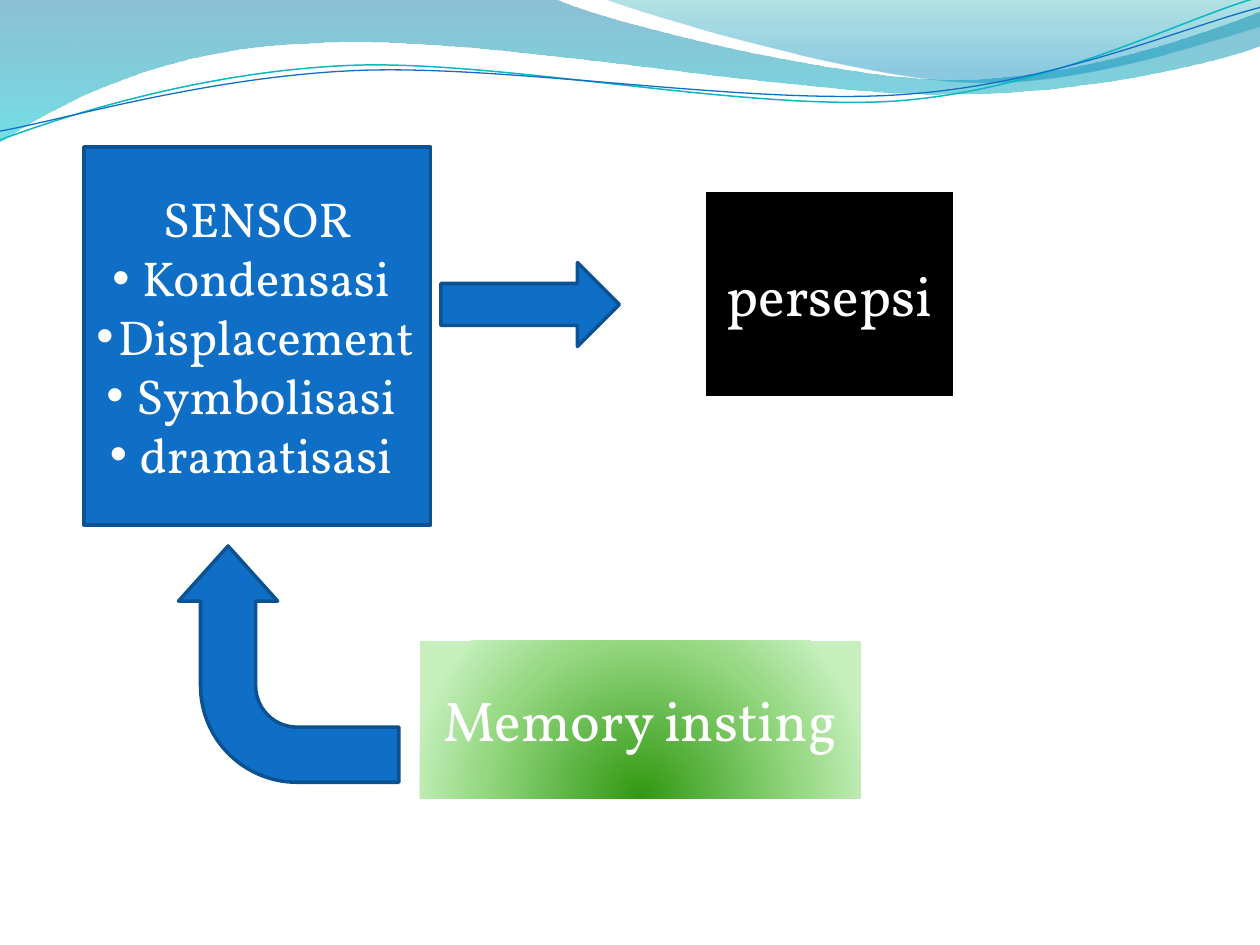
import dataclasses
import math
import typing

import lxml.etree
import pptx
import pptx.dml.color
import pptx.enum.shapes
import pptx.enum.text
import pptx.oxml
import pptx.oxml.ns
import pptx.util

Pt = pptx.util.Pt
SHAPES = pptx.enum.shapes.MSO_SHAPE
qn = pptx.oxml.ns.qn
Point = tuple[float, float]


class Stop(typing.NamedTuple):
    position: int
    color: str
    alpha: int = 100


class Outline(typing.NamedTuple):
    color: str
    width: float


class Gradient(typing.NamedTuple):
    stops: tuple[Stop, ...]
    radial: bool = False


Fill = str | Gradient | None


@dataclasses.dataclass(frozen=True)
class Theme:
    font: str = "Vollkorn"
    text: str = "FFFFFF"
    list_size: int = 28
    label_size: int = 32
    blue: str = "0F6FC6"
    black: str = "000000"
    edge: Outline = Outline("0B5292", 2)
    frame: Outline = Outline("FFFFFF", 3)
    teal_line: Outline = Outline("0AB8BF", 0.85)
    blue_line: Outline = Outline("0F6FC6", 0.75)
    back_wave: Gradient = Gradient((Stop(0, "0074A1", 45), Stop(100, "00C6CF", 55)))
    front_wave: Gradient = Gradient((Stop(0, "00A1A9", 30), Stop(80, "008BBF", 45)))
    green: Gradient = Gradient(
        (Stop(0, "319811"), Stop(68, "95D882"), Stop(100, "C6EFBD")), radial=True)


THEME = Theme()


@dataclasses.dataclass(frozen=True)
class Wave:
    """Segments hold one point for a line, or three for a cubic curve."""
    start: Point
    segments: tuple[tuple[Point, ...], ...]
    fill: Fill = None
    outline: Outline | None = None
    tilt: float = 0
    center: Point = (0, 0)


@dataclasses.dataclass(frozen=True)
class Block:
    kind: SHAPES
    box: tuple[float, float, float, float]
    fill: Fill
    outline: Outline | None = THEME.edge
    rotation: float = 0
    adjustments: tuple[float, ...] = ()
    heading: str = ""
    items: tuple[str, ...] = ()
    size: int = THEME.label_size


WAVES = (
    Wave((0, 0), (
        ((317, -0.7),),
        ((343, 12), (478, 45.4), (546, 45.4)),
        ((614, 45.4), (690, 18.7), (720, 6.5)),
        ((720.7, 26),),
        ((708, 31.7), (626, 54.7), (537, 54)),
        ((448, 54), (275, 20.2), (185, 24.5)),
        ((93, 26), (33, 59.8), (-0.7, 81.4)),
    ), fill=THEME.back_wave),
    Wave((345, -0.7), (
        ((366.5, 8), (491, 44.6), (553.7, 46.8)),
        ((616.3, 49.7), (692, 23), (720, 15.1)),
        ((720, 0),),
    ), fill=THEME.front_wave),
    Wave((0, 80), (
        ((34.6, 67), (113.8, 41), (199.4, 37.4)),
        ((284.4, 33.8), (427, 64), (513.4, 57.6)),
        ((599.8, 51), (675.4, 10.8), (718.6, -1.4)),
    ), outline=THEME.teal_line, tilt=-2.7, center=(359.3, 41.4)),
    Wave((0, 74.9), (
        ((33.8, 69.1), (118, 43.9), (203.8, 40.3)),
        ((290.2, 36.7), (429.8, 60.5), (516.2, 54)),
        ((601.9, 48.2), (677.5, 15.1), (720, 4.3)),
    ), outline=THEME.blue_line, tilt=-2.7, center=(359.6, 42.5)),
)

BLOCKS = (
    Block(SHAPES.FLOWCHART_PROCESS, (240, 366, 252, 90), THEME.green, None,
          heading="Memory insting"),
    Block(SHAPES.BENT_ARROW, (97.5, 316.5, 135, 126), THEME.blue, rotation=270,
          adjustments=(0.25, 0.225, 0.25, 0.438)),
    Block(SHAPES.RECTANGLE, (402, 108, 144, 120), THEME.black, THEME.frame,
          heading="persepsi"),
    Block(SHAPES.RIGHT_ARROW, (252, 150, 102, 48), THEME.blue),
    Block(SHAPES.RECTANGLE, (48, 84, 198, 216), THEME.blue, heading="SENSOR",
          items=("Kondensasi", "Displacement", "Symbolisasi", "dramatisasi"),
          size=THEME.list_size),
)


def rgb(color: str) -> pptx.dml.color.RGBColor:
    return pptx.dml.color.RGBColor.from_string(color)


def gradient_xml(gradient: Gradient) -> str:
    stops = "".join(
        f'<a:gs pos="{stop.position * 1000}"><a:srgbClr val="{stop.color}">'
        f'<a:alpha val="{stop.alpha * 1000}"/></a:srgbClr></a:gs>'
        for stop in gradient.stops)
    direction = (
        '<a:path path="circle"><a:fillToRect l="50000" t="130000" r="50000" b="-30000"/></a:path>'
        if gradient.radial else '<a:lin ang="5400000" scaled="0"/>')
    namespace = pptx.oxml.ns.nsdecls("a")
    return f'<a:gradFill {namespace} rotWithShape="1"><a:gsLst>{stops}</a:gsLst>{direction}</a:gradFill>'


def paint(shape, fill: Fill, outline: Outline | None) -> None:
    shape.shadow.inherit = False
    if isinstance(fill, Gradient):
        shape.fill.gradient()
        properties = shape._element.spPr
        properties.replace(properties.find(qn("a:gradFill")),
                           pptx.oxml.parse_xml(gradient_xml(fill)))
    elif fill:
        shape.fill.solid()
        shape.fill.fore_color.rgb = rgb(fill)
    else:
        shape.fill.background()
    if outline:
        shape.line.color.rgb = rgb(outline.color)
        shape.line.width = Pt(outline.width)
    else:
        shape.line.fill.background()


def untilt(point: Point, wave: Wave) -> Point:
    """Turn a point back, so that the shape's own rotation returns it to its place."""
    angle = math.radians(-wave.tilt)
    dx, dy = point[0] - wave.center[0], point[1] - wave.center[1]
    return (wave.center[0] + dx * math.cos(angle) - dy * math.sin(angle),
            wave.center[1] + dx * math.sin(angle) + dy * math.cos(angle))


def bend(shape, segments: tuple[tuple[Point, ...], ...]) -> None:
    """Join the three lines of each cubic segment into one curve."""
    lines = iter(list(shape._element.spPr.iter(qn("a:lnTo"))))
    for segment in segments:
        parts = [next(lines) for _ in segment]
        if len(parts) == 3:
            curve = lxml.etree.Element(qn("a:cubicBezTo"))
            parts[0].addprevious(curve)
            for part in parts:
                curve.append(part[0])
                part.getparent().remove(part)


def draw_wave(slide, wave: Wave) -> None:
    points = [wave.start, *(point for segment in wave.segments for point in segment)]
    corners = [(Pt(x), Pt(y)) for x, y in (untilt(point, wave) for point in points)]
    builder = slide.shapes.build_freeform(*corners[0])
    builder.add_line_segments(corners[1:], close=wave.fill is not None)
    shape = builder.convert_to_shape()
    bend(shape, wave.segments)
    shape.rotation = wave.tilt
    paint(shape, wave.fill, wave.outline)


def write(paragraph, text: str, *, size: int, bullet: bool = False) -> None:
    paragraph.alignment = pptx.enum.text.PP_ALIGN.CENTER
    run = paragraph.add_run()
    run.text = text
    run.font.name = THEME.font
    run.font.size = Pt(size)
    run.font.color.rgb = rgb(THEME.text)
    if bullet:
        properties = paragraph._p.get_or_add_pPr()
        lxml.etree.SubElement(properties, qn("a:buFont"), typeface="Arial")
        lxml.etree.SubElement(properties, qn("a:buChar"), char="•")


def draw_block(slide, block: Block) -> None:
    shape = slide.shapes.add_shape(block.kind, *map(Pt, block.box))
    shape.rotation = block.rotation
    for index, value in enumerate(block.adjustments):
        shape.adjustments[index] = value
    paint(shape, block.fill, block.outline)
    if block.heading:
        frame = shape.text_frame
        frame.word_wrap = True
        frame.vertical_anchor = pptx.enum.text.MSO_ANCHOR.MIDDLE
        write(frame.paragraphs[0], block.heading, size=block.size)
        for item in block.items:
            write(frame.add_paragraph(), item, size=block.size, bullet=True)


def main() -> None:
    deck = pptx.Presentation()
    deck.slide_width, deck.slide_height = Pt(720), Pt(540)
    slide = deck.slides.add_slide(deck.slide_layouts[6])
    for wave in WAVES:
        draw_wave(slide, wave)
    for block in BLOCKS:
        draw_block(slide, block)
    deck.save("out.pptx")


if __name__ == "__main__":
    main()
